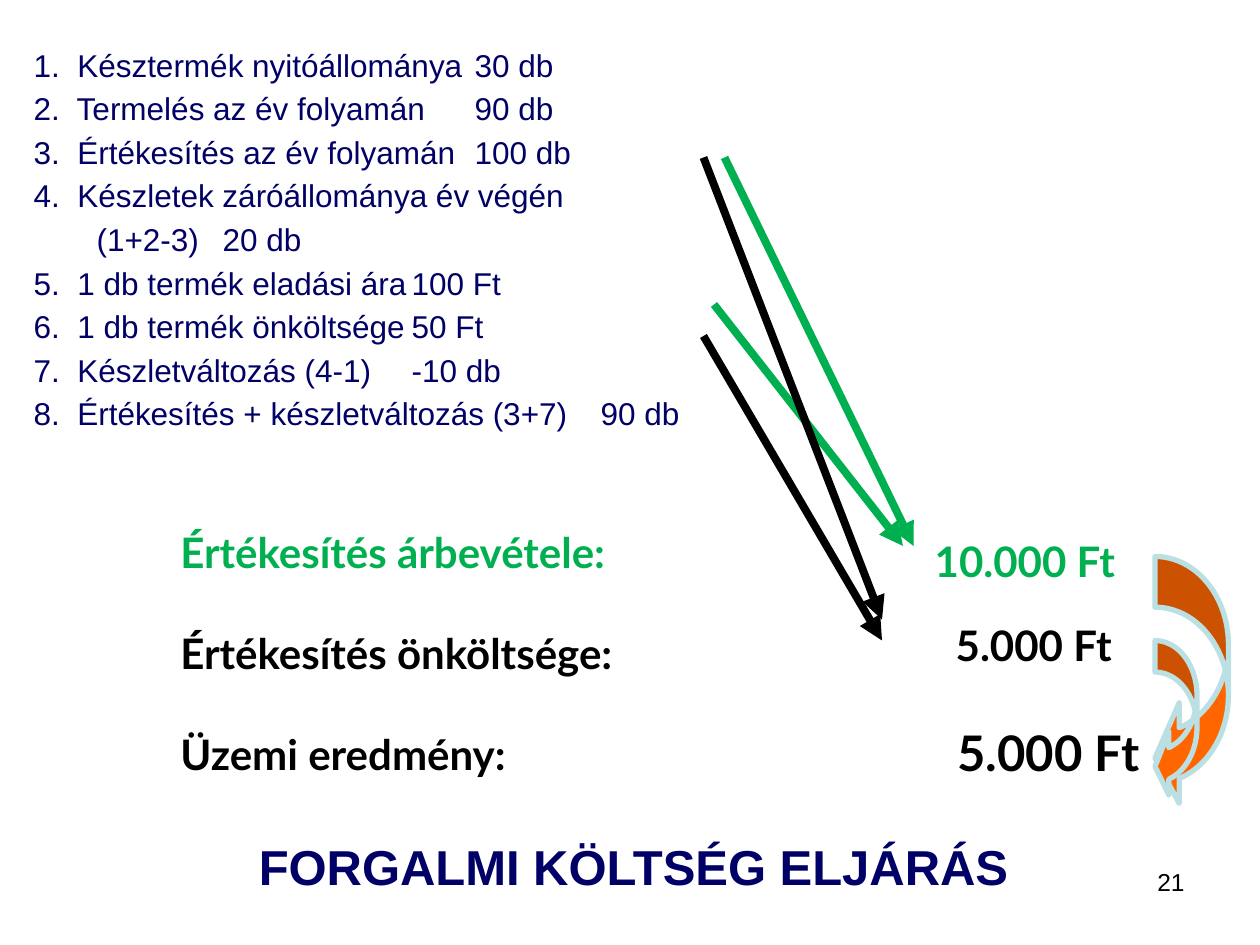
from pptx import Presentation
from pptx.dml.color import RGBColor
from pptx.enum.shapes import MSO_CONNECTOR, MSO_SHAPE
from pptx.enum.text import MSO_ANCHOR, MSO_AUTO_SIZE, PP_ALIGN
from pptx.oxml.ns import qn
from pptx.util import Pt
from lxml.etree import SubElement

C = {"navy": "000066", "green": "00B050", "black": "000000",
     "orange": "FF6600", "pale": "BBE0E3"}


def add_run(p, text, size, font, color, bold=False):
    r = p.add_run()
    r.text = text
    r.font.size, r.font.name, r.font.bold = Pt(size), font, bold
    r.font.color.rgb = RGBColor.from_string(C[color])


def add_text(s, box, lines, size, font="Lato", bold=True, align=PP_ALIGN.LEFT, gap=0):
    tf = s.shapes.add_textbox(*map(Pt, box)).text_frame
    tf.word_wrap = True
    for i, (text, color) in enumerate(lines):
        p = tf.add_paragraph() if i else tf.paragraphs[0]
        p.alignment, p.space_after = align, Pt(gap)
        add_run(p, text, size, font, color, bold)


prs = Presentation()
prs.slide_width, prs.slide_height = Pt(720), Pt(540)
s = prs.slides.add_slide(prs.slide_layouts[1])

title, body = s.shapes.title, s.placeholders[1]
title.left, title.top, title.width, title.height = Pt(122), Pt(450), Pt(480), Pt(90)
tf = title.text_frame
tf.auto_size, tf.vertical_anchor = MSO_AUTO_SIZE.NONE, MSO_ANCHOR.MIDDLE
tf.paragraphs[0].alignment = PP_ALIGN.CENTER
add_run(tf.paragraphs[0], "FORGALMI KÖLTSÉG ELJÁRÁS", 28, "Arial", "navy", True)

add_text(s, (516, 492, 168, 37), [("21", "black")], 14, "Arial", False, PP_ALIGN.RIGHT)
add_text(s, (96, 297.5, 300, 153),
         [("Értékesítés árbevétele:", "green"), ("Értékesítés önköltsége:", "black"),
          ("Üzemi eredmény:", "black")], 24, gap=28.8)

arrows = [
    (414, 90, 522, 312, "green"),
    (408, 174, 516, 312, "green"),
    (402, 90, 504, 354, "black"),
    (402, 192, 504, 366, "black"),
]
for x1, y1, x2, y2, color in arrows:
    c = s.shapes.add_connector(MSO_CONNECTOR.STRAIGHT, Pt(x1), Pt(y1), Pt(x2), Pt(y2))
    c.line.color.rgb = RGBColor.from_string(C[color])
    c.line.width = Pt(4.5)
    SubElement(c.line._get_or_add_ln(), qn("a:tailEnd"), type="triangle")
    SubElement(c._element.spPr, qn("a:effectLst"))

amounts = [
    ("10.000 Ft", 527, 302.5, 24, "green"),
    ("5.000 Ft", 539, 350.5, 24, "black"),
    ("5.000 Ft", 540, 409.5, 28, "black"),
]
for text, x, y, size, color in amounts:
    add_text(s, (x, y, 131, 40), [(text, color)], size)

for y, w, h, adj in [(318, 42, 144, (0.69, 1.37, 0.33)), (366, 24, 90, (0.75, 1.5, 0.33))]:
    sp = s.shapes.add_shape(MSO_SHAPE.CURVED_LEFT_ARROW, Pt(660), Pt(y), Pt(w), Pt(h))
    for i, value in enumerate(adj):
        sp.adjustments[i] = value
    sp.shadow.inherit = False
    sp.fill.solid()
    sp.fill.fore_color.rgb = RGBColor.from_string(C["orange"])
    sp.line.color.rgb = RGBColor.from_string(C["pale"])
    sp.line.width = Pt(3)

items = [
    ("1.  Késztermék nyitóállománya\t30 db", [392]),
    ("2.  Termelés az év folyamán\t90 db", [319.5]),
    ("3.  Értékesítés az év folyamán\t100 db", [307.5]),
    ("4.  Készletek záróállománya év végén", []),
    ("\t(1+2-3)\t20 db", [30, 324.5]),
    ("5.  1 db termék eladási ára\t100 Ft", [387]),
    ("6.  1 db termék önköltsége\t50 Ft", [396.5]),
    ("7.  Készletváltozás (4-1)\t-10 db", [387]),
    ("8.  Értékesítés + készletváltozás (3+7)\t90 db", [324.5]),
]
body.left, body.top, body.width, body.height = Pt(12), Pt(24), Pt(696), Pt(300)
s.shapes._spTree.append(body._element)
tf = body.text_frame
tf.auto_size = MSO_AUTO_SIZE.NONE
for i, (text, stops) in enumerate(items):
    p = tf.add_paragraph() if i else tf.paragraphs[0]
    p.line_spacing, p.space_before = 0.95, Pt(4.4)
    pPr = p._p.get_or_add_pPr()
    pPr.set("marL", "0")
    pPr.set("indent", "0")
    SubElement(pPr, qn("a:buNone"))
    tabs = SubElement(pPr, qn("a:tabLst"))
    for stop in stops:
        SubElement(tabs, qn("a:tab"), pos=str(Pt(stop)), algn="l")
    add_run(p, text, 18, "Arial", "navy")

prs.save("out.pptx")
